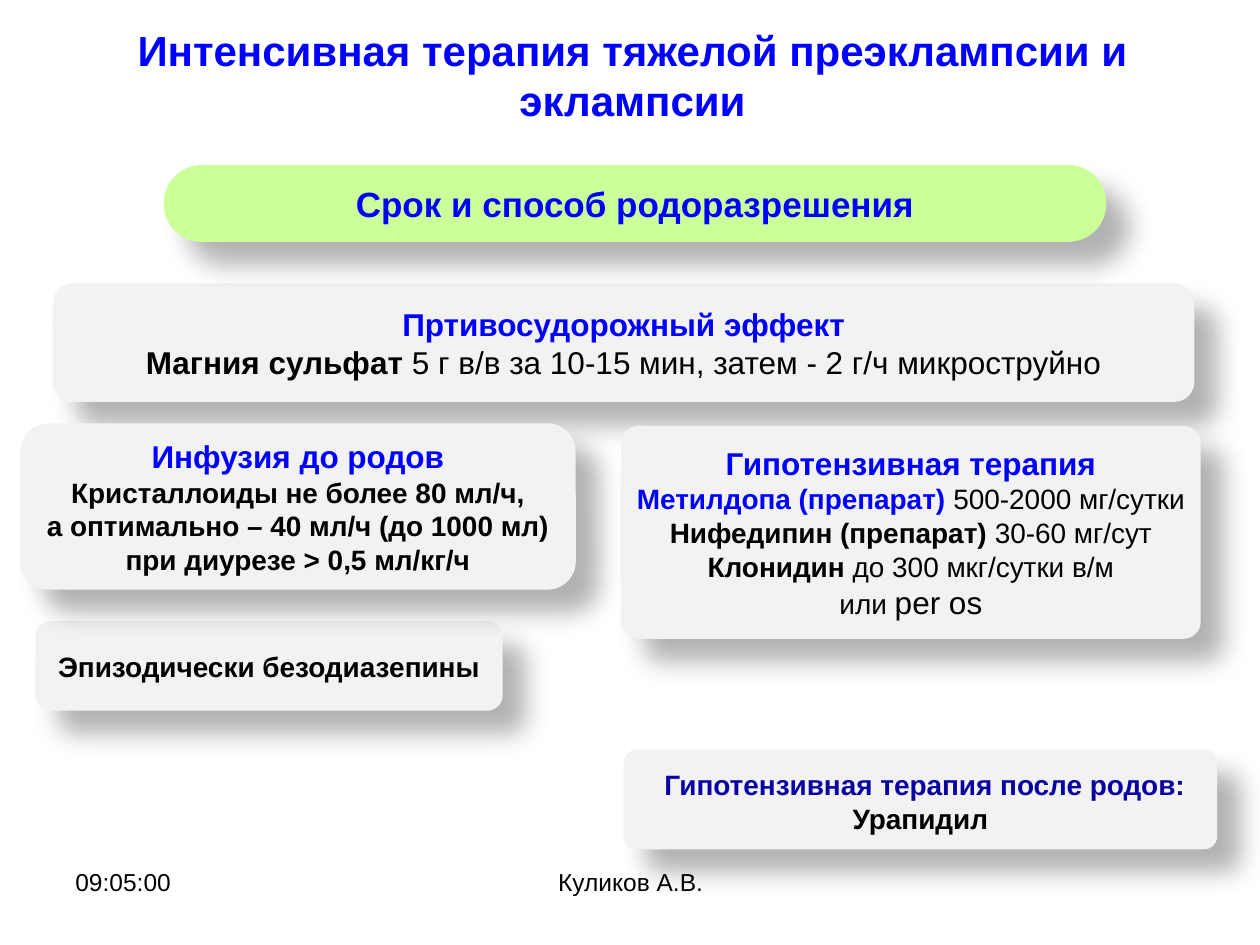
from lxml.etree import SubElement
from pptx import Presentation
from pptx.dml.color import RGBColor
from pptx.enum.shapes import MSO_SHAPE as Shape
from pptx.enum.text import MSO_ANCHOR as Anchor, PP_ALIGN as Align
from pptx.oxml.ns import qn
from pptx.util import Inches, Pt

BLUE, NAVY, BLACK = "0000FF", "0A02A0", "000000"
GREY, GREEN = "F2F2F2", "CCFF99"


def color(hex_value):
    return RGBColor.from_string(hex_value)


def bold(text, size=16, ink=BLACK):
    return text, size, ink, True


def plain(text, size=16, ink=BLACK):
    return text, size, ink, False


def write(frame, lines, align=Align.CENTER, anchor=Anchor.MIDDLE, wrap=True):
    """Fill a text frame; each line is a list of (text, size, ink, bold) runs."""
    frame.word_wrap = wrap
    frame.vertical_anchor = anchor
    for index, line in enumerate(lines):
        paragraph = frame.paragraphs[0] if index == 0 else frame.add_paragraph()
        paragraph.alignment = align
        for text, size, ink, is_bold in line:
            run = paragraph.add_run()
            run.text = text
            run.font.name = "Arial"
            run.font.size = Pt(size)
            run.font.bold = is_bold
            run.font.color.rgb = color(ink)


def add_text(slide, box, lines, **text_format):
    label = slide.shapes.add_textbox(*map(Inches, box))
    write(label.text_frame, lines, **text_format)


def add_soft_shadow(shape):
    """Cast a blurred 30% black shadow to the lower right."""
    effects = SubElement(shape._element.spPr, qn("a:effectLst"))
    shadow = SubElement(effects, qn("a:outerShdw"), blurRad=str(Pt(15)),
                        dist=str(Pt(18)), dir=str(45 * 60000),
                        algn="tl", rotWithShape="0")
    ink = SubElement(shadow, qn("a:srgbClr"), val=BLACK)
    SubElement(ink, qn("a:alpha"), val="30000")


def add_card(slide, box, lines, fill=GREY, rounding=0.17):
    card = slide.shapes.add_shape(Shape.ROUNDED_RECTANGLE, *map(Inches, box))
    card.adjustments[0] = rounding
    card.fill.solid()
    card.fill.fore_color.rgb = color(fill)
    card.line.fill.background()
    add_soft_shadow(card)
    write(card.text_frame, lines, wrap=False)


def main():
    deck = Presentation()
    deck.slide_width, deck.slide_height = Inches(10), Inches(7.5)
    slide = deck.slides.add_slide(deck.slide_layouts[6])

    add_text(slide, (0.5, 6.83, 2.33, 0.52), [[plain("09:05:00", 14)]],
             align=Align.LEFT, anchor=Anchor.TOP)
    add_text(slide, (0.51, 0.36, 9.02, 0.47),
             [[bold("Интенсивная терапия тяжелой преэклампсии и эклампсии", 24, BLUE)]])

    add_card(slide, (0.42, 2.25, 9.06, 0.94), [
        [bold("Пртивосудорожный эффект", 18, BLUE)],
        [bold("Магния сульфат", 18),
         plain(" 5 г в/в за 10-15 мин, затем - 2 г/ч микроструйно", 18)],
    ])
    add_card(slide, (4.93, 3.38, 4.6, 1.69), [
        [bold("Гипотензивная терапия", 18, BLUE)],
        [bold("Метилдопа (препарат)", ink=BLUE), plain(" 500-2000 мг/сутки")],
        [bold("Нифедипин (препарат)"), plain(" 30-60 мг/сут")],
        [bold("Клонидин"), plain(" до 300 мкг/сутки в/м")],
        [plain("или "), plain("per os", 18)],
    ], rounding=0.08)
    add_card(slide, (0.28, 4.93, 3.71, 0.71), [[bold("Эпизодически безодиазепины")]])
    add_card(slide, (4.95, 5.95, 4.71, 0.79), [
        [plain(" ", 18), bold("Гипотензивная терапия после родов:", ink=NAVY)],
        [bold("Урапидил")],
    ], rounding=0.13)
    add_card(slide, (0.16, 3.36, 4.41, 1.32), [
        [bold("Инфузия до родов", 18, BLUE)],
        [bold("Кристаллоиды не более 80 мл/ч,")],
        [bold("а оптимально – 40 мл/ч (до 1000 мл)")],
        [bold("при диурезе > 0,5 мл/кг/ч")],
    ])
    add_card(slide, (1.3, 1.31, 7.48, 0.61),
             [[bold("Срок и способ родоразрешения", 20, BLUE)]],
             fill=GREEN, rounding=0.49)

    add_text(slide, (3.42, 6.83, 3.17, 0.52), [[plain("Куликов А.В.", 14)]],
             anchor=Anchor.TOP)
    deck.save("out.pptx")


if __name__ == "__main__":
    main()
